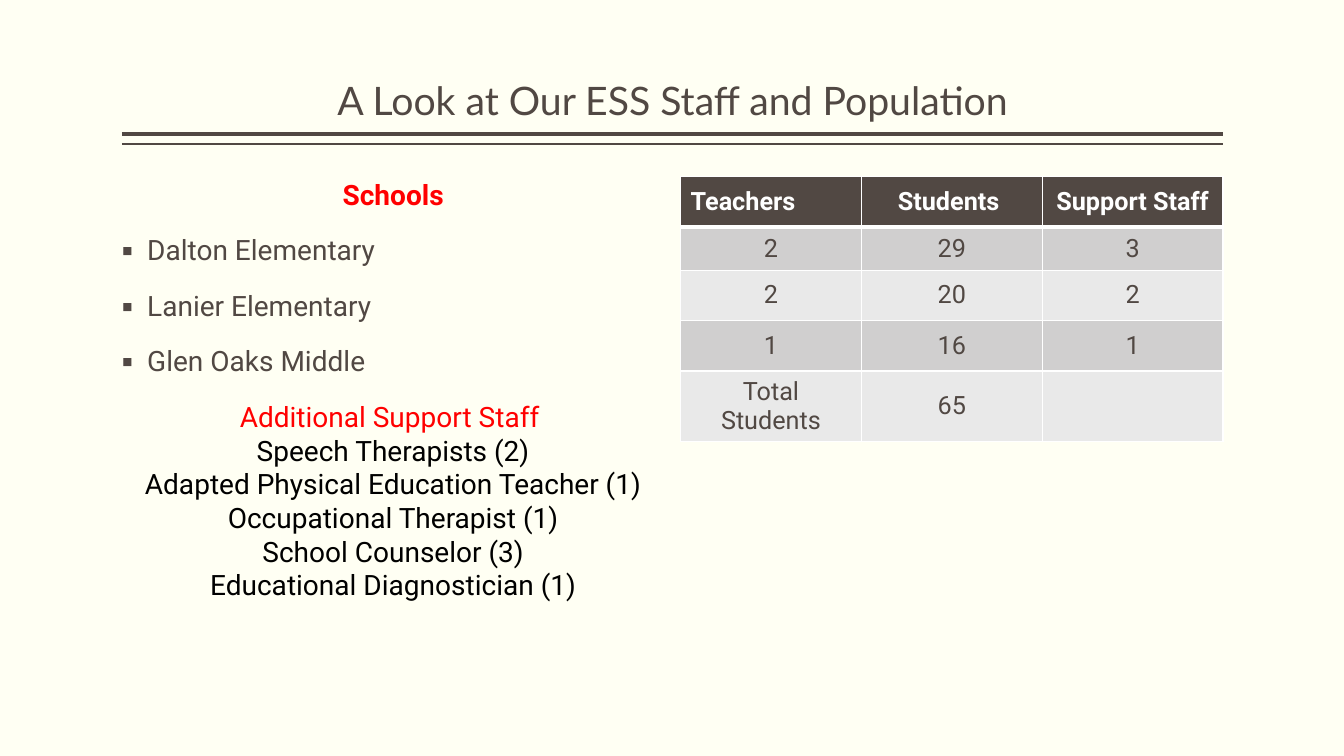
from lxml.etree import SubElement
from pptx import Presentation
from pptx.dml.color import RGBColor
from pptx.enum.shapes import MSO_CONNECTOR
from pptx.enum.text import MSO_ANCHOR, PP_ALIGN
from pptx.oxml.ns import qn
from pptx.util import Inches, Pt

COLORS = {"paper": "FFFFF3", "brown": "514843", "red": "FF0000", "black": "000000",
          "white": "FFFFFF", "dark_band": "D0CFCF", "light_band": "E9E9E9"}
TITLE = "A Look at Our ESS Staff and Population"
SCHOOLS = ["Dalton Elementary", "Lanier Elementary", "Glen Oaks Middle"]
SUPPORT_STAFF = [
    "Speech Therapists (2)",
    "Adapted Physical Education Teacher (1)",
    "Occupational Therapist (1)",
    "School Counselor (3)",
    "Educational Diagnostician (1)",
]
STAFF_TABLE = [
    ("Teachers", "Students ", "Support Staff"),
    ("2", "29", "3"),
    ("2", "20", "2"),
    ("1", "16", "1"),
    ("Total Students", "65", ""),
]
ROW_HEIGHTS = [0.5, 0.43, 0.5, 0.5, 0.5]
RULES = [(1.33, 3), (1.43, 1)]
LEFT, WIDTH = 1.21, 10.92
TABLE_LEFT, TABLE_WIDTH, BODY_TOP = 6.75, 5.38, 1.75


def rgb(name):
    return RGBColor.from_string(COLORS[name])


def add_run(p, text, size, color, font="Roboto", bold=False):
    r = p.add_run()
    r.text = text
    r.font.size, r.font.name, r.font.bold = Pt(size), font, bold
    r.font.color.rgb = rgb(color)


def add_text_frame(slide, left, top, width, height, anchor):
    tf = slide.shapes.add_textbox(*map(Inches, (left, top, width, height))).text_frame
    tf.word_wrap = True
    tf.vertical_anchor = anchor
    tf.margin_left = tf.margin_right = 0
    return tf


def add_rules(slide):
    for y, weight in RULES:
        line = slide.shapes.add_connector(
            MSO_CONNECTOR.STRAIGHT, Inches(LEFT), Inches(y), Inches(LEFT + WIDTH), Inches(y))
        line.line.color.rgb = rgb("brown")
        line.line.width = Pt(weight)
        SubElement(line._element.spPr, qn("a:effectLst"))


def add_bullet(p):
    pPr = p._p.get_or_add_pPr()
    pPr.set("marL", str(Inches(0.25)))
    pPr.set("indent", str(-Inches(0.25)))
    SubElement(pPr, qn("a:buFont")).set("typeface", "Roboto")
    SubElement(pPr, qn("a:buChar")).set("char", "▪")


def add_body(slide):
    tf = add_text_frame(slide, LEFT, BODY_TOP, 5.38, 5, MSO_ANCHOR.TOP)
    lines = [("heading", "Schools", "red")]
    lines += [("school", name, "brown") for name in SCHOOLS]
    lines += [("heading", "Additional Support Staff ", "red")]
    lines += [("staff", name, "black") for name in SUPPORT_STAFF]
    for i, (kind, text, color) in enumerate(lines):
        p = tf.add_paragraph() if i else tf.paragraphs[0]
        if kind != "staff":
            p.line_spacing, p.space_before = 0.9, Pt(18)
        if kind == "school":
            add_bullet(p)
        else:
            p.alignment = PP_ALIGN.CENTER
        add_run(p, text, 20, color, bold=i == 0)


def set_borders(cell, header, below_header):
    """White 1 pt borders, with a 3 pt edge between header and body."""
    tcPr = cell._tc.get_or_add_tcPr()
    thick = {"lnB": header, "lnT": below_header}
    for i, side in enumerate(("lnL", "lnR", "lnT", "lnB")):
        ln = tcPr.makeelement(qn(f"a:{side}"), {"w": str(Pt(3 if thick.get(side) else 1))})
        fill = SubElement(ln, qn("a:solidFill"))
        SubElement(fill, qn("a:srgbClr")).set("val", COLORS["white"])
        tcPr.insert(i, ln)


def add_staff_table(slide):
    n_rows, n_cols = len(STAFF_TABLE), len(STAFF_TABLE[0])
    table = slide.shapes.add_table(
        n_rows, n_cols, Inches(TABLE_LEFT), Inches(BODY_TOP),
        Inches(TABLE_WIDTH), Inches(sum(ROW_HEIGHTS))).table
    for column in table.columns:
        column.width = Inches(TABLE_WIDTH / n_cols)
    for i, values in enumerate(STAFF_TABLE):
        table.rows[i].height = Inches(ROW_HEIGHTS[i])
        header = i == 0
        band = "brown" if header else "dark_band" if i % 2 else "light_band"
        for j, text in enumerate(values):
            cell = table.cell(i, j)
            cell.fill.solid()
            cell.fill.fore_color.rgb = rgb(band)
            set_borders(cell, header, i == 1)
            cell.vertical_anchor = MSO_ANCHOR.MIDDLE
            p = cell.text_frame.paragraphs[0]
            p.alignment = PP_ALIGN.LEFT if header and j == 0 else PP_ALIGN.CENTER
            if text:
                add_run(p, text, 18, "white" if header else "brown", bold=header)


def main():
    prs = Presentation()
    prs.slide_width, prs.slide_height = Inches(13.33), Inches(7.5)
    slide = prs.slides.add_slide(prs.slide_layouts[6])
    slide.background.fill.solid()
    slide.background.fill.fore_color.rgb = rgb("paper")
    add_rules(slide)
    p = add_text_frame(slide, LEFT, 0.08, WIDTH, 1.2, MSO_ANCHOR.BOTTOM).paragraphs[0]
    p.alignment, p.line_spacing = PP_ALIGN.CENTER, 0.9
    add_run(p, TITLE, 28, "brown", font="Lato")
    add_body(slide)
    add_staff_table(slide)
    prs.save("out.pptx")


if __name__ == "__main__":
    main()
